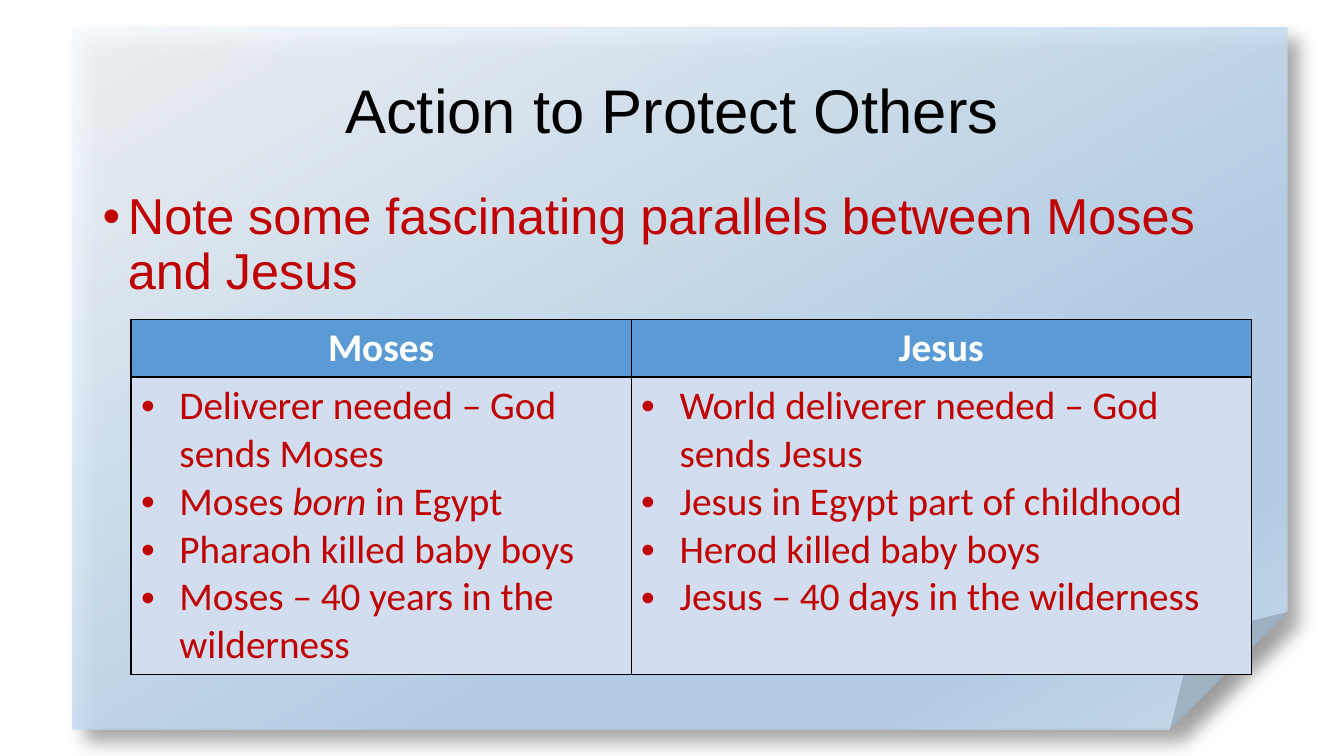
from lxml import etree
from pptx import Presentation
from pptx.dml.color import RGBColor
from pptx.enum.shapes import MSO_SHAPE
from pptx.enum.text import MSO_ANCHOR, PP_ALIGN
from pptx.oxml import parse_xml
from pptx.oxml.ns import nsdecls, qn
from pptx.util import Pt

FOLD = MSO_SHAPE.FOLDED_CORNER
TOP, MIDDLE = MSO_ANCHOR.TOP, MSO_ANCHOR.MIDDLE
LEFT, CENTER = PP_ALIGN.LEFT, PP_ALIGN.CENTER
PX = 9144  # 100 px to the inch

TITLE = "Action to Protect Others"
LEAD = "Note some fascinating parallels between Moses and Jesus"
HEADS = ["Moses", "Jesus"]
# A paragraph is a list of (text, italic) runs
POINTS = [
    [
        [("Deliverer needed – God sends Moses", False)],
        [("Moses ", False), ("born", True), (" in Egypt", False)],
        [("Pharaoh killed baby boys", False)],
        [("Moses – 40 years in the wilderness", False)],
    ],
    [
        [("World deliverer needed – God sends Jesus", False)],
        [("Jesus in Egypt part of childhood", False)],
        [("Herod killed baby boys", False)],
        [("Jesus – 40 days in the wilderness", False)],
    ],
]
COLS, ROWS = [496, 615], [57, 295]
STOPS = [(0, "F7FAFD"), (64, "B5D2EC"), (83, "B5D2EC"), (100, "CEE1F2")]
RED, BLACK, WHITE = "C00000", "000000", "FFFFFF"
HEAD_FILL, BODY_FILL = "5B9BD5", "D2DEEF"


def px(*vals):
    return [round(v * PX) for v in vals]


def rgb(code):
    return RGBColor.from_string(code)


def put(frame, paras, size, font, color, align=LEFT, bold=False,
        indent=0, spacing=None, anchor=TOP):
    """Write paragraphs of runs; an indent also gives each one a bullet."""
    frame.word_wrap = True
    frame.vertical_anchor = anchor
    for i, runs in enumerate(paras):
        para = frame.add_paragraph() if i else frame.paragraphs[0]
        if indent:
            props = para._p.get_or_add_pPr()
            props.set("marL", str(indent * PX))
            props.set("indent", str(-indent * PX))
            etree.SubElement(props, qn("a:buFont")).set("typeface", "Arial")
            etree.SubElement(props, qn("a:buChar")).set("char", "•")
        para.alignment = align
        if spacing:
            para.line_spacing = spacing
        for text, italic in runs:
            run = para.add_run()
            run.text = text
            face = run.font
            face.size, face.name = Pt(size), font
            face.bold, face.italic = bold, italic
            face.color.rgb = rgb(color)


def add_sheet(slide):
    sheet = slide.shapes.add_shape(FOLD, *px(72, 27, 1205, 697))
    sheet.line.fill.background()
    props = sheet._element.spPr
    stops = "".join(
        f'<a:gs pos="{pos * 1000}"><a:srgbClr val="{code}">'
        f'<a:alpha val="87000"/></a:srgbClr></a:gs>' for pos, code in STOPS)
    props.insert(2, parse_xml(
        f'<a:gradFill {nsdecls("a")} rotWithShape="1"><a:gsLst>{stops}</a:gsLst>'
        '<a:lin ang="3600000" scaled="0"/></a:gradFill>'))
    props.append(parse_xml(
        f'<a:effectLst {nsdecls("a")}><a:outerShdw blurRad="{Pt(13)}" '
        f'dist="{Pt(13)}" dir="2700000" algn="tl" rotWithShape="0">'
        f'<a:srgbClr val="{BLACK}"><a:alpha val="40000"/></a:srgbClr>'
        '</a:outerShdw></a:effectLst>'))


def add_text(slide, box, text, **form):
    frame = slide.shapes.add_textbox(*px(*box)).text_frame
    put(frame, [[(text, False)]], font="Arial", spacing=0.9, **form)


def fill_cell(cell, fill, paras, **form):
    cell.fill.solid()
    cell.fill.fore_color.rgb = rgb(fill)
    props = cell._tc.get_or_add_tcPr()
    for i, side in enumerate(("lnL", "lnR", "lnT", "lnB")):
        props.insert(i, parse_xml(
            f'<a:{side} {nsdecls("a")} w="{Pt(1)}"><a:solidFill>'
            f'<a:srgbClr val="{BLACK}"/></a:solidFill></a:{side}>'))
    put(cell.text_frame, paras, size=28, font="Calibri", **form)


def add_grid(slide):
    table = slide.shapes.add_table(
        2, 2, *px(130, 317, sum(COLS), sum(ROWS))).table
    for row, high in zip(table.rows, px(*ROWS)):
        row.height = high
    for c, wide in enumerate(px(*COLS)):
        table.columns[c].width = wide
        fill_cell(table.cell(0, c), HEAD_FILL, [[(HEADS[c], False)]],
                  color=WHITE, bold=True, align=CENTER)
        fill_cell(table.cell(1, c), BODY_FILL, POINTS[c],
                  color=RED, indent=38)


def main():
    deck = Presentation()
    deck.slide_width, deck.slide_height = px(1333, 750)
    slide = deck.slides.add_slide(deck.slide_layouts[6])
    add_sheet(slide)
    add_text(slide, (92, 40, 1150, 145), TITLE, size=44, color=BLACK,
             align=CENTER, anchor=MIDDLE)
    add_text(slide, (92, 185, 1150, 491), LEAD, size=36, color=RED, indent=25)
    add_grid(slide)
    deck.save("out.pptx")


if __name__ == "__main__":
    main()
